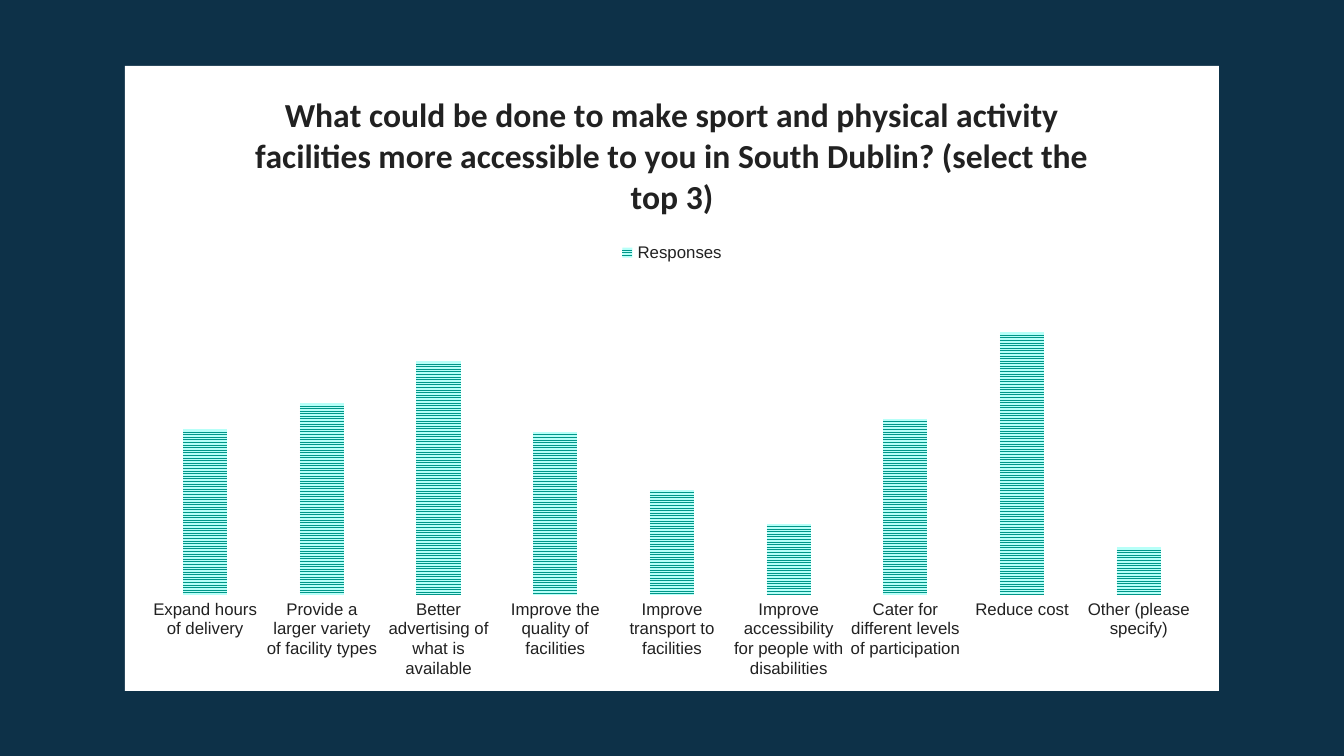
from pptx import Presentation
from pptx.chart.data import CategoryChartData
from pptx.dml.color import RGBColor
from pptx.enum.chart import XL_CHART_TYPE, XL_LEGEND_POSITION, XL_TICK_MARK
from pptx.enum.dml import MSO_PATTERN
from pptx.oxml import parse_xml
from pptx.oxml.ns import nsdecls, qn
from pptx.util import Inches, Pt

NAVY = RGBColor(0x0D, 0x31, 0x48)
WHITE = RGBColor(0xFF, 0xFF, 0xFF)
INK = RGBColor(0x21, 0x21, 0x21)
TEAL = RGBColor(0x00, 0x96, 0x88)
MINT = RGBColor(0xB7, 0xFF, 0xF8)

RESPONSES = {
    "Expand hours of delivery": 63,
    "Provide a larger variety of facility types": 73,
    "Better advertising of what is available": 89,
    "Improve the quality of facilities": 62,
    "Improve transport to facilities": 40,
    "Improve accessibility for people with disabilities": 27,
    "Cater for different levels of participation": 67,
    "Reduce cost": 100,
    "Other (please specify)": 18,
}


def style(font, name="Arial", size=9, bold=False, color=INK):
    font.name, font.size, font.bold = name, Pt(size), bold
    font.color.rgb = color


def add_text(tf, text, **fmt):
    r = tf.paragraphs[0].add_run()
    r.text = text
    style(r.font, **fmt)


# Slide (16:9) and background
prs = Presentation()
prs.slide_width = Inches(10)
prs.slide_height = prs.slide_width * 9 // 16
s = prs.slides.add_slide(prs.slide_layouts[6])
s.background.fill.solid()
s.background.fill.fore_color.rgb = NAVY

# Chart
data = CategoryChartData(number_format="0.00%")
data.categories = list(RESPONSES)
data.add_series("Responses", list(RESPONSES.values()))
chart = s.shapes.add_chart(
    XL_CHART_TYPE.COLUMN_CLUSTERED,
    Inches(0.93), Inches(0.49), Inches(8.14), Inches(4.65), data).chart
style(chart.font, size=10)

# Title and legend
add_text(chart.chart_title.text_frame,
         "What could be done to make sport and physical activity facilities "
         "more accessible to you in South Dublin? (select the top 3)",
         name="Calibri", size=18, bold=True)
chart.has_legend = True
chart.legend.position = XL_LEGEND_POSITION.TOP
chart.legend.include_in_layout = False
style(chart.legend.font)

# Axes
cat_axis = chart.category_axis
cat_axis.major_tick_mark = cat_axis.minor_tick_mark = XL_TICK_MARK.NONE
cat_axis.format.line.color.rgb = WHITE
cat_axis.format.line.width = Pt(1.5)
style(cat_axis.tick_labels.font)
val_axis = chart.value_axis
val_axis.minimum_scale, val_axis.maximum_scale = 0, 120
val_axis.has_major_gridlines = False
val_axis.visible = False

# Striped columns
plot = chart.plots[0]
plot.gap_width, plot.overlap = 164, -22
plot.vary_by_categories = False
fill = plot.series[0].format.fill
fill.patterned()
fill.pattern = MSO_PATTERN.NARROW_HORIZONTAL
fill.fore_color.rgb, fill.back_color.rgb = TEAL, MINT

# White chart area
chart._chartSpace.find(qn("c:chart")).addnext(parse_xml(
    f'<c:spPr {nsdecls("c", "a")}><a:solidFill><a:srgbClr val="{WHITE}"/>'
    '</a:solidFill><a:ln><a:noFill/></a:ln></c:spPr>'))

prs.save("out.pptx")
